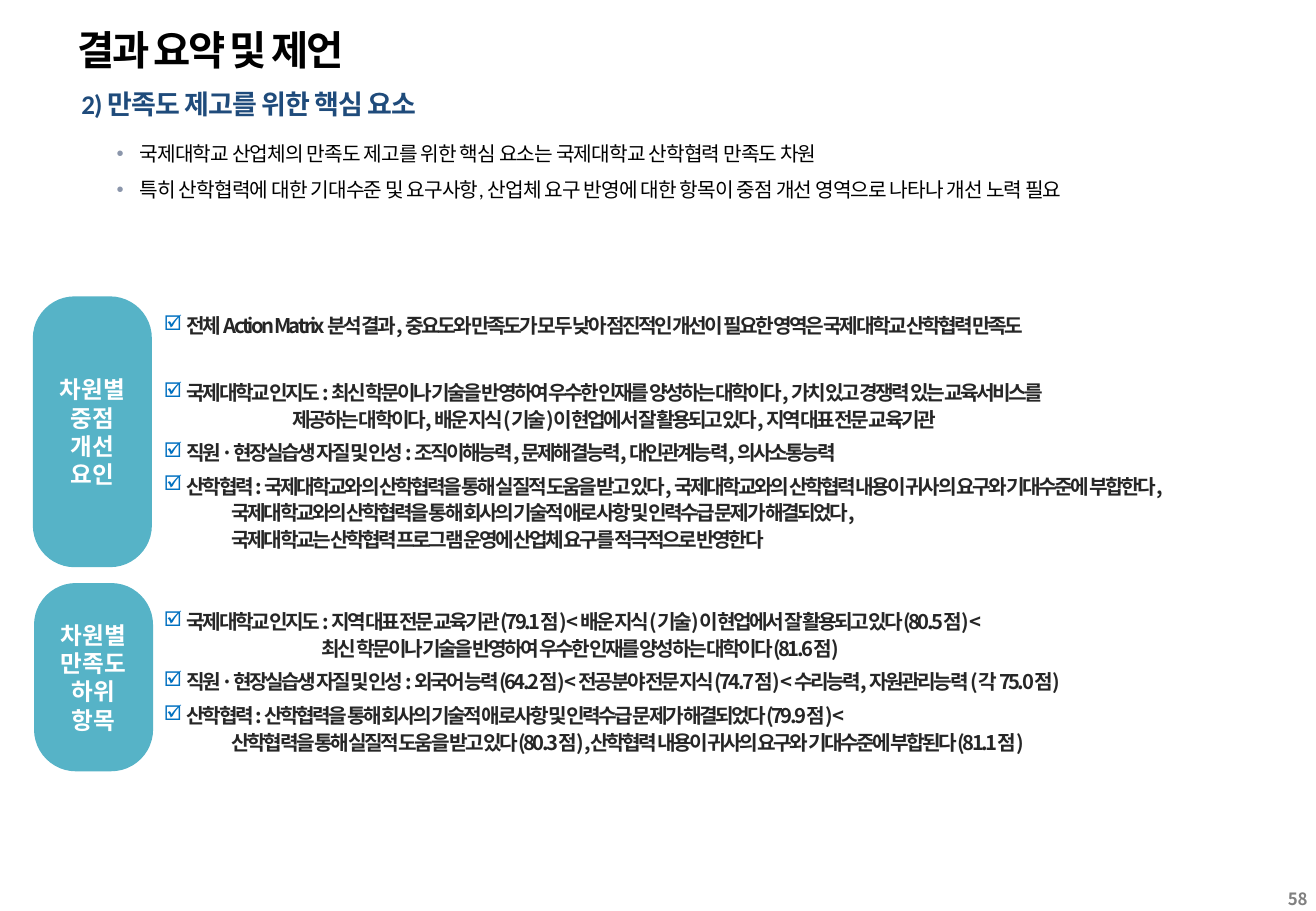
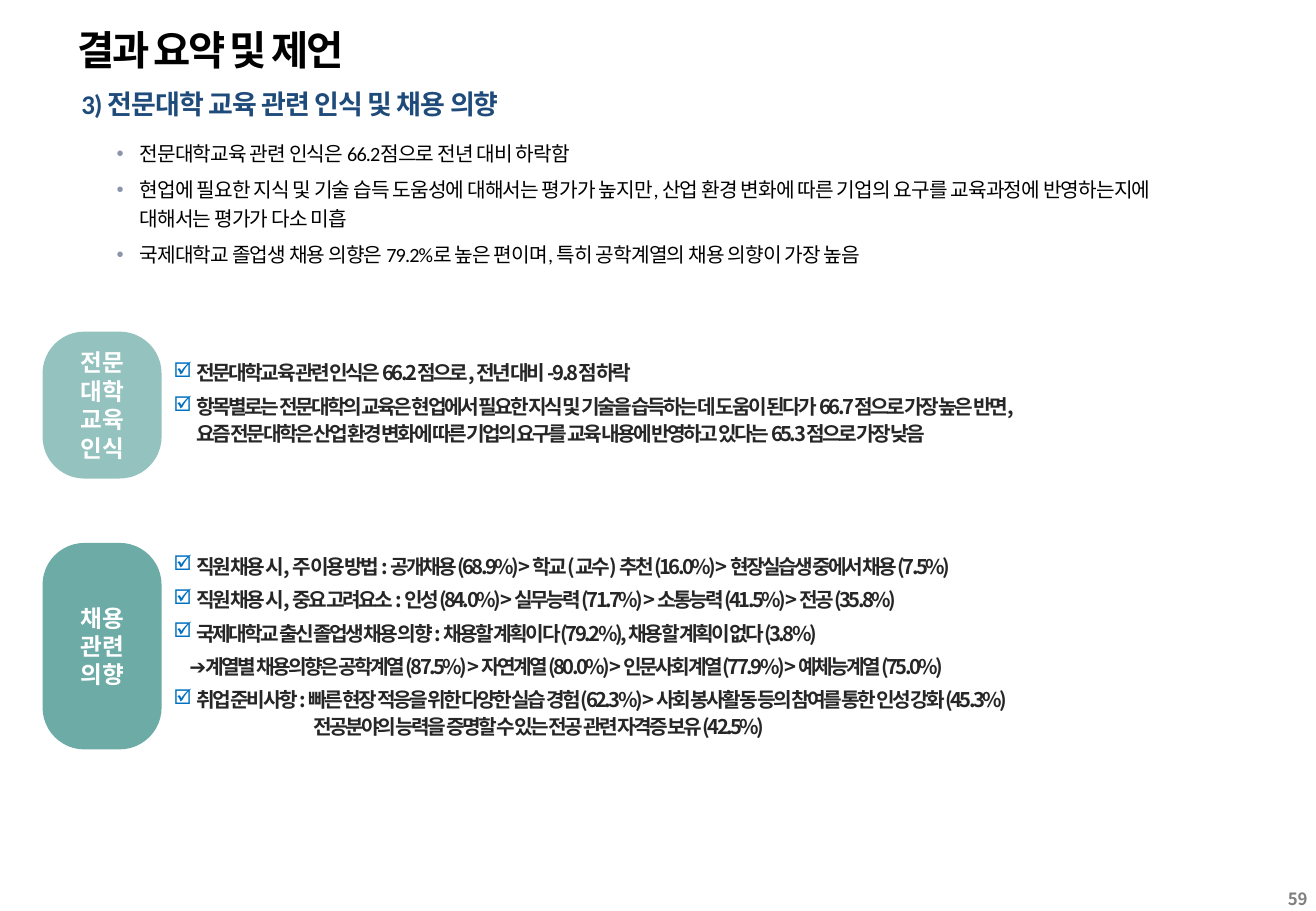
import pptx
import pptx.dml.color
import pptx.enum.shapes
import pptx.enum.text
import pptx.oxml
import pptx.oxml.ns
import pptx.util
from lxml import etree

Inches = pptx.util.Inches
Pt = pptx.util.Pt
ALIGN = pptx.enum.text.PP_ALIGN
ANCHOR = pptx.enum.text.MSO_ANCHOR

HANGUL_FONT = "Noto Sans CJK KR"
HANGING = 0.19
CYAN, PALE_TEAL, TEAL = "56B3C7", "94C2BF", "6DABA7"

TITLE = {"font": {"name": "Calibri", "size": Pt(24), "bold": True},
         "color": "000000", "tracking": -1.5}
SUBTITLE = {"font": {"name": "Calibri", "size": Pt(16), "bold": True},
            "color": "1F4B7B", "tracking": -0.5}
BODY = {"font": {"name": "Calibri", "size": Pt(12), "bold": False},
        "color": "000000", "tracking": -0.5}
CHECK = {"font": {"name": HANGUL_FONT, "size": Pt(12), "bold": True},
         "color": "262626", "tracking": -1.5}
LABEL = {"font": {"name": "Cabin", "size": Pt(14), "bold": True},
         "color": "FFFFFF", "tracking": 0}
NUMBER = {"font": {"name": HANGUL_FONT, "size": Pt(10), "bold": True},
          "color": "808080", "tracking": 0}


def color(value):
    return pptx.dml.color.RGBColor.from_string(value)


def set_values(target, values):
    for name, value in values.items():
        setattr(target, name, value)


def add_element(parent, tag, **attributes):
    return etree.SubElement(parent, pptx.oxml.ns.qn(tag), attributes)


def set_bullet(paragraph, indent, bullet=None, bullet_color=None):
    properties = paragraph._p.get_or_add_pPr()
    properties.set("marL", str(Inches(indent)))
    properties.set("indent", str(Inches(-indent if bullet else 0)))
    if bullet:
        fill = add_element(properties, "a:buClr")
        add_element(fill, "a:srgbClr", val=bullet_color)
        add_element(properties, "a:buChar", char=bullet)
    else:
        add_element(properties, "a:buNone")


def write(paragraph, text, style, **layout):
    paragraph.text = text
    set_values(paragraph, layout)
    for run in paragraph.runs:
        set_values(run.font, style["font"])
        run.font.color.rgb = color(style["color"])
        properties = run._r.get_or_add_rPr()
        properties.set("spc", str(round(style["tracking"] * 100)))
        add_element(properties, "a:ea", typeface=HANGUL_FONT)


def place(shape, left, top, width, height):
    set_values(shape, {"left": Inches(left), "top": Inches(top),
                       "width": Inches(width), "height": Inches(height)})


def prepare_frame(shape, anchor, wrap=True, side=0.1, edge=0.05):
    frame = shape.text_frame
    set_values(frame, {
        "word_wrap": wrap, "auto_size": pptx.enum.text.MSO_AUTO_SIZE.NONE,
        "vertical_anchor": anchor,
        "margin_left": Inches(side), "margin_right": Inches(side),
        "margin_top": Inches(edge), "margin_bottom": Inches(edge)})
    return frame


def next_paragraph(frame, index):
    return frame.add_paragraph() if index else frame.paragraphs[0]


def add_heading(placeholder, text, style, box, **layout):
    place(placeholder, *box)
    paragraph = prepare_frame(placeholder, ANCHOR.MIDDLE, wrap=False).paragraphs[0]
    set_bullet(paragraph, 0)
    write(paragraph, text, style, alignment=ALIGN.LEFT, space_before=Pt(0), **layout)


def add_body(placeholder, items):
    place(placeholder, 0.86, 1.07, 9.68, 0.31)
    frame = prepare_frame(placeholder, ANCHOR.TOP)
    for index, text in enumerate(items):
        paragraph = next_paragraph(frame, index)
        set_bullet(paragraph, HANGING, "•", "8B96AB")
        write(paragraph, text, BODY, line_spacing=Pt(17.4),
              space_before=Pt(0), space_after=Pt(4))


def add_checklist(slide, box, groups):
    shape = slide.shapes.add_textbox(*map(Inches, box))
    frame = prepare_frame(shape, ANCHOR.TOP)
    index = 0
    for gap, rows in groups:
        for row_number, (text, indent, continues) in enumerate(rows):
            paragraph = next_paragraph(frame, index)
            if indent is None:
                set_bullet(paragraph, HANGING, "☑", "0070C0")
            else:
                set_bullet(paragraph, indent)
            space = gap if row_number == 0 else 0 if continues else 4
            write(paragraph, text, CHECK, line_spacing=Pt(15.84),
                  space_before=Pt(space))
            index += 1


def check(text):
    return text, None, False


def continued(text, indent):
    return text, indent, True


def add_label(slide, box, fill, lines):
    shape = slide.shapes.add_shape(
        pptx.enum.shapes.MSO_SHAPE.ROUNDED_RECTANGLE, *map(Inches, box))
    shape.adjustments[0] = 0.352
    shape.shadow.inherit = False
    shape.fill.solid()
    shape.fill.fore_color.rgb = color(fill)
    shape.line.fill.background()
    frame = prepare_frame(shape, ANCHOR.MIDDLE, side=0.04)
    for index, text in enumerate(lines):
        write(next_paragraph(frame, index), text, LABEL,
              alignment=ALIGN.CENTER, line_spacing=Pt(16.8))


def add_page(presentation, number, subtitle, items):
    slide = presentation.slides.add_slide(presentation.slide_layouts[3])
    title, subheading, body = list(slide.placeholders)[:3]
    add_heading(title, "결과 요약 및 제언", TITLE, (0.54, 0.16, 3.65, 0.5))
    add_heading(subheading, subtitle, SUBTITLE, (0.57, 0.66, 7.58, 0.39),
                space_after=Pt(1.5))
    add_body(body, items)
    number_box = slide.shapes.add_textbox(*map(Inches, (10.38, 7.29, 0.48, 0.21)))
    frame = prepare_frame(number_box, ANCHOR.MIDDLE, edge=0)
    write(frame.paragraphs[0], str(number), NUMBER, alignment=ALIGN.RIGHT)
    return slide


def add_satisfaction_page(presentation):
    slide = add_page(presentation, 58, "2) 만족도 제고를 위한 핵심 요소", [
        "국제대학교 산업체의 만족도 제고를 위한 핵심 요소는 국제대학교 산학협력 만족도 차원",
        "특히 산학협력에 대한 기대수준 및 요구사항, 산업체 요구 반영에 대한 항목이 중점 개선 영역으로 나타나 개선 노력 필요",
    ])
    add_checklist(slide, (1.25, 2.51, 9.36, 3.79), [
        (0, [
            check("전체 Action Matrix 분석 결과, 중요도와 만족도가 모두 낮아 점진적인 개선이 필요한 영역은 국제대학교 산학협력 만족도"),
        ]),
        (23.8, [
            check("국제대학교 인지도 : 최신 학문이나 기술을 반영하여 우수한 인재를 양성하는 대학이다, 가치 있고 경쟁력 있는 교육서비스를"),
            continued("제공하는 대학이다, 배운 지식(기술)이 현업에서 잘 활용되고 있다, 지역 대표 전문 교육기관", 1.06),
            check("직원·현장실습생 자질 및 인성 : 조직이해능력, 문제해결능력, 대인관계능력, 의사소통능력"),
            check("산학협력 : 국제대학교와의 산학협력을 통해 실질적 도움을 받고 있다, 국제대학교와의 산학협력 내용이 귀사의 요구와 기대수준에 부합한다,"),
            continued("국제대학교와의 산학협력을 통해 회사의 기술적 애로사항 및 인력수급 문제가 해결되었다,", 0.56),
            continued("국제대학교는 산학협력 프로그램 운영에 산업체 요구를 적극적으로 반영한다", 0.56),
        ]),
        (32.8, [
            check("국제대학교 인지도 : 지역 대표 전문 교육기관(79.1점) < 배운 지식(기술)이 현업에서 잘 활용되고 있다(80.5점) <"),
            continued("최신 학문이나 기술을 반영하여 우수한 인재를 양성하는 대학이다(81.6점)", 1.3),
            check("직원·현장실습생 자질 및 인성 : 외국어 능력(64.2점) < 전공분야 전문 지식(74.7점) < 수리능력, 자원관리능력 (각 75.0점)"),
            check("산학협력 : 산학협력을 통해 회사의 기술적 애로사항 및 인력수급 문제가 해결되었다(79.9점) <"),
            continued("산학협력을 통해 실질적 도움을 받고 있다(80.3점) ,산학협력 내용이 귀사의 요구와 기대수준에 부합된다(81.1점)", 0.56),
        ]),
    ])
    add_label(slide, (0.27, 2.44, 0.98, 2.23), CYAN, ["차원별", "중점", "개선", "요인"])
    add_label(slide, (0.28, 4.8, 0.98, 1.55), CYAN, ["차원별", "만족도", "하위", "항목"])


def add_hiring_page(presentation):
    slide = add_page(presentation, 59, "3) 전문대학 교육 관련 인식 및 채용 의향", [
        "전문대학교육 관련 인식은 66.2점으로 전년 대비 하락함",
        "현업에 필요한 지식 및 기술 습득 도움성에 대해서는 평가가 높지만, 산업 환경 변화에 따른 기업의 요구를 교육과정에 반영하는지에\v대해서는 평가가 다소 미흡",
        "국제대학교 졸업생 채용 의향은 79.2%로 높은 편이며, 특히 공학계열의 채용 의향이 가장 높음",
    ])
    add_checklist(slide, (1.33, 2.9, 9.36, 3.27), [
        (0, [
            check("전문대학교육 관련 인식은 66.2점으로, 전년 대비 -9.8점 하락"),
            check("항목별로는 전문대학의 교육은 현업에서 필요한 지식 및 기술을 습득하는 데 도움이 된다가 66.7점으로 가장 높은 반면,\v요즘 전문대학은 산업 환경 변화에 따른 기업의 요구를 교육 내용에 반영하고 있다는 65.3점으로 가장 낮음"),
        ]),
        (63, [
            check("직원 채용 시, 주 이용 방법 : 공개채용(68.9%) > 학교(교수) 추천(16.0%) > 현장실습생 중에서 채용(7.5%)"),
            check("직원 채용 시, 중요 고려요소 : 인성(84.0%) > 실무능력(71.7%) > 소통능력(41.5%) > 전공(35.8%)"),
            check("국제대학교 출신 졸업생 채용 의향 : 채용할 계획이다(79.2%), 채용할 계획이 없다(3.8%)"),
            ("➔ 계열별 채용의향은 공학계열(87.5%) > 자연계열(80.0%) > 인문사회계열(77.9%) > 예체능계열(75.0%)", 0.13, False),
            check("취업 준비사항 : 빠른 현장 적응을 위한 다양한 실습 경험(62.3%) > 사회 봉사활동 등의 참여를 통한 인성 강화(45.3%)"),
            continued("전공분야의 능력을 증명할 수 있는 전공 관련 자격증 보유(42.5%)", 1.15),
        ]),
    ])
    add_label(slide, (0.35, 2.73, 0.98, 1.21), PALE_TEAL, ["전문", "대학", "교육", "인식"])
    add_label(slide, (0.35, 4.47, 0.98, 1.7), TEAL, ["채용", "관련", "의향"])


def main():
    presentation = pptx.Presentation()
    set_values(presentation, {"slide_width": Inches(10.83), "slide_height": Inches(7.5)})
    add_satisfaction_page(presentation)
    add_hiring_page(presentation)
    presentation.save("out.pptx")


if __name__ == "__main__":
    main()
